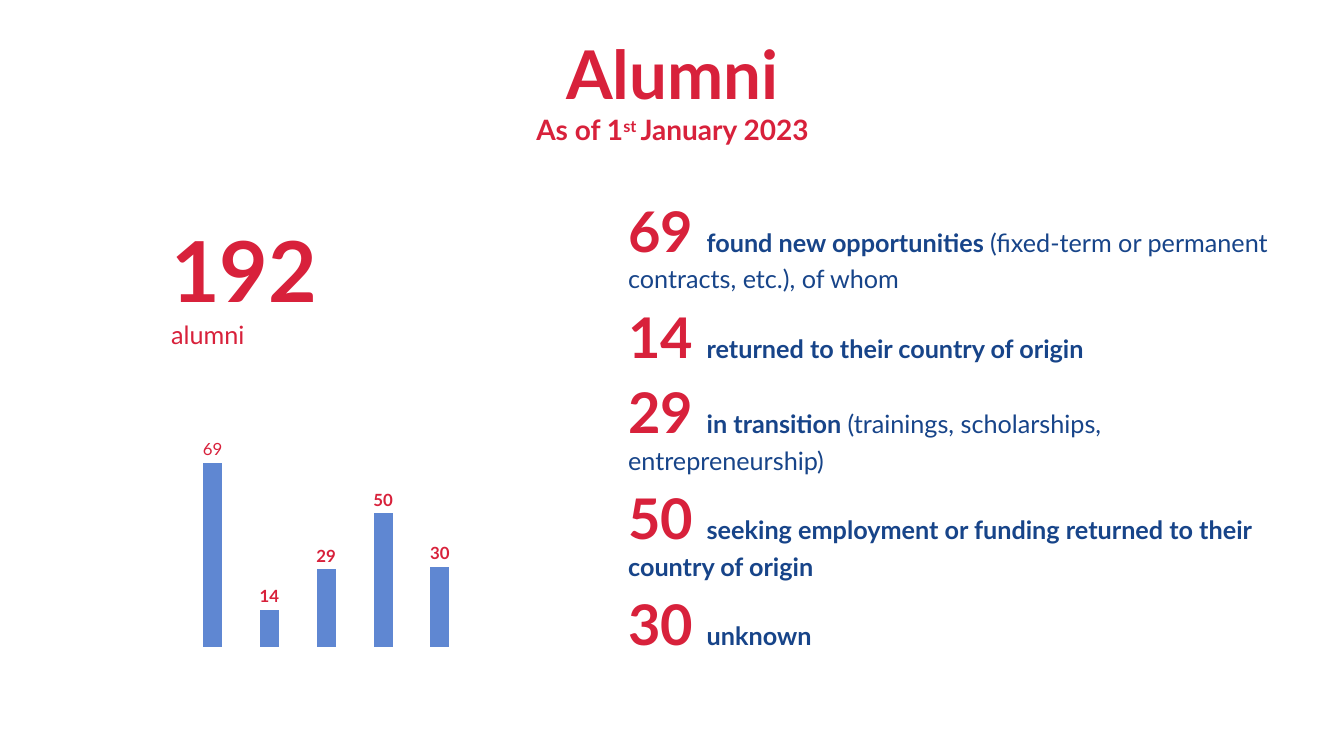
from lxml.etree import SubElement
from pptx import Presentation
from pptx.chart.data import CategoryChartData
from pptx.dml.color import RGBColor
from pptx.enum.chart import XL_CHART_TYPE, XL_LABEL_POSITION
from pptx.enum.text import MSO_ANCHOR, MSO_AUTO_SIZE, PP_ALIGN
from pptx.oxml import parse_xml
from pptx.oxml.ns import nsdecls, qn
from pptx.util import Inches, Pt

RED = "D8213B"
NAVY = "174489"
BLUE = "5F87D2"
FONT = "Lato"
OUTCOMES = [
    (69, "found new opportunities ", "(fixed-term or permanent contracts, etc.), of whom"),
    (14, "returned to their country of origin", ""),
    (29, "in transition ", "(trainings, scholarships, entrepreneurship)"),
    (50, "seeking employment or funding returned to their country of origin", ""),
    (30, "unknown", ""),
]
PLOT_LAYOUT = (
    f"<c:layout {nsdecls('c')}><c:manualLayout>"
    '<c:layoutTarget val="inner"/><c:xMode val="edge"/><c:yMode val="edge"/>'
    '<c:x val="0.07"/><c:y val="0.04"/><c:w val="0.87"/><c:h val="0.96"/>'
    "</c:manualLayout></c:layout>"
)


def color(hex_value):
    """Return the colour for a hex string."""
    return RGBColor.from_string(hex_value)


def set_values(target, values):
    """Set each named attribute on the target."""
    for name, value in values.items():
        setattr(target, name, value)


def format_font(font, size, hex_value, bold=True):
    """Give a font its face, size, weight and colour."""
    set_values(font, {"name": FONT, "size": Pt(size), "bold": bold})
    font.color.rgb = color(hex_value)


def add_run(paragraph, text, size, hex_value=RED, bold=True):
    """Append a formatted run and return it."""
    run = paragraph.add_run()
    run.text = text
    format_font(run.font, size, hex_value, bold)
    return run


def place(shape, box, anchor=MSO_ANCHOR.TOP):
    """Move a text shape to its box and return its text frame."""
    lengths = [Inches(length) for length in box]
    set_values(shape, dict(zip(("left", "top", "width", "height"), lengths)))
    frame = shape.text_frame
    set_values(frame, {
        "word_wrap": True,
        "auto_size": MSO_AUTO_SIZE.NONE,
        "vertical_anchor": anchor,
    })
    return frame


def fill_title(title, box):
    """Write the heading and its date line."""
    paragraph = place(title, box, MSO_ANCHOR.BOTTOM).paragraphs[0]
    paragraph.alignment = PP_ALIGN.CENTER
    add_run(paragraph, "Alumni", 48)
    paragraph.add_line_break()
    add_run(paragraph, "As of 1", 20)
    ordinal = add_run(paragraph, "st ", 20)
    ordinal.font._element.set("baseline", "30000")
    add_run(paragraph, "January 2023", 20)


def fill_outcomes(body, box):
    """List what became of the alumni."""
    frame = place(body, box)
    for index, (count, outcome, detail) in enumerate(OUTCOMES):
        paragraph = frame.add_paragraph() if index else frame.paragraphs[0]
        set_values(paragraph, {"space_before": Pt(0), "space_after": Pt(6)})
        properties = paragraph._p.get_or_add_pPr()
        properties.set("marL", "0")
        properties.set("indent", "0")
        SubElement(properties, qn("a:buNone"))
        add_run(paragraph, f"{count} ", 40)
        add_run(paragraph, outcome, 18, NAVY)
        if detail:
            add_run(paragraph, detail, 18, NAVY, False)


def add_total(slide, box):
    """Add the total number of alumni."""
    shape = slide.shapes.add_textbox(0, 0, 0, 0)
    paragraph = place(shape, box).paragraphs[0]
    paragraph.space_after = Pt(6)
    total = sum(count for count, _, _ in OUTCOMES)
    add_run(paragraph, str(total), 60)
    paragraph.add_line_break()
    add_run(paragraph, "alumni", 18, bold=False)


def add_outcome_chart(slide, box):
    """Add the column chart of the outcome counts."""
    data = CategoryChartData()
    counts = [count for count, _, _ in OUTCOMES]
    data.categories = [str(number) for number in range(1, len(counts) + 1)]
    data.add_series("Series 1", counts)
    lengths = [Inches(length) for length in box]
    chart = slide.shapes.add_chart(XL_CHART_TYPE.COLUMN_CLUSTERED, *lengths, data).chart
    set_values(chart, {"has_legend": False, "has_title": False})
    set_values(chart.font, {"name": "TeX Gyre Bonum", "size": Pt(10)})
    chart.font.color.rgb = color("000000")
    chart.category_axis.visible = False
    set_values(chart.value_axis, {
        "visible": False,
        "has_major_gridlines": False,
        "minimum_scale": 0,
        "maximum_scale": 80,
    })
    plot = chart.plots[0]
    set_values(plot, {"gap_width": 199, "vary_by_categories": False})
    plot_area = plot._element.getparent()
    for layout in plot_area.findall(qn("c:layout")):
        plot_area.remove(layout)
    plot_area.insert(0, parse_xml(PLOT_LAYOUT))
    series = plot.series[0]
    series.format.fill.solid()
    series.format.fill.fore_color.rgb = color(BLUE)
    labels = series.data_labels
    position = XL_LABEL_POSITION.OUTSIDE_END
    set_values(labels, {"show_value": True, "position": position})
    format_font(labels.font, 12, RED)
    first_label = series.points[0].data_label
    add_run(first_label.text_frame.paragraphs[0], str(counts[0]), 12, bold=False)
    first_label.position = position


def build_alumni_slide(presentation):
    """Build the alumni overview slide."""
    slide = presentation.slides.add_slide(presentation.slide_layouts[1])
    fill_title(slide.shapes.title, (0.64, 0.39, 12.06, 1.11))
    fill_outcomes(slide.placeholders[1], (6.13, 1.9, 6.82, 5.22))
    add_total(slide, (1.6, 2.12, 3.24, 2.6))
    add_outcome_chart(slide, (1.6, 4.21, 3.24, 2.21))


def main():
    """Create and save the presentation."""
    presentation = Presentation()
    set_values(presentation, {"slide_width": Inches(13.33), "slide_height": Inches(7.5)})
    build_alumni_slide(presentation)
    presentation.save("out.pptx")


if __name__ == "__main__":
    main()
